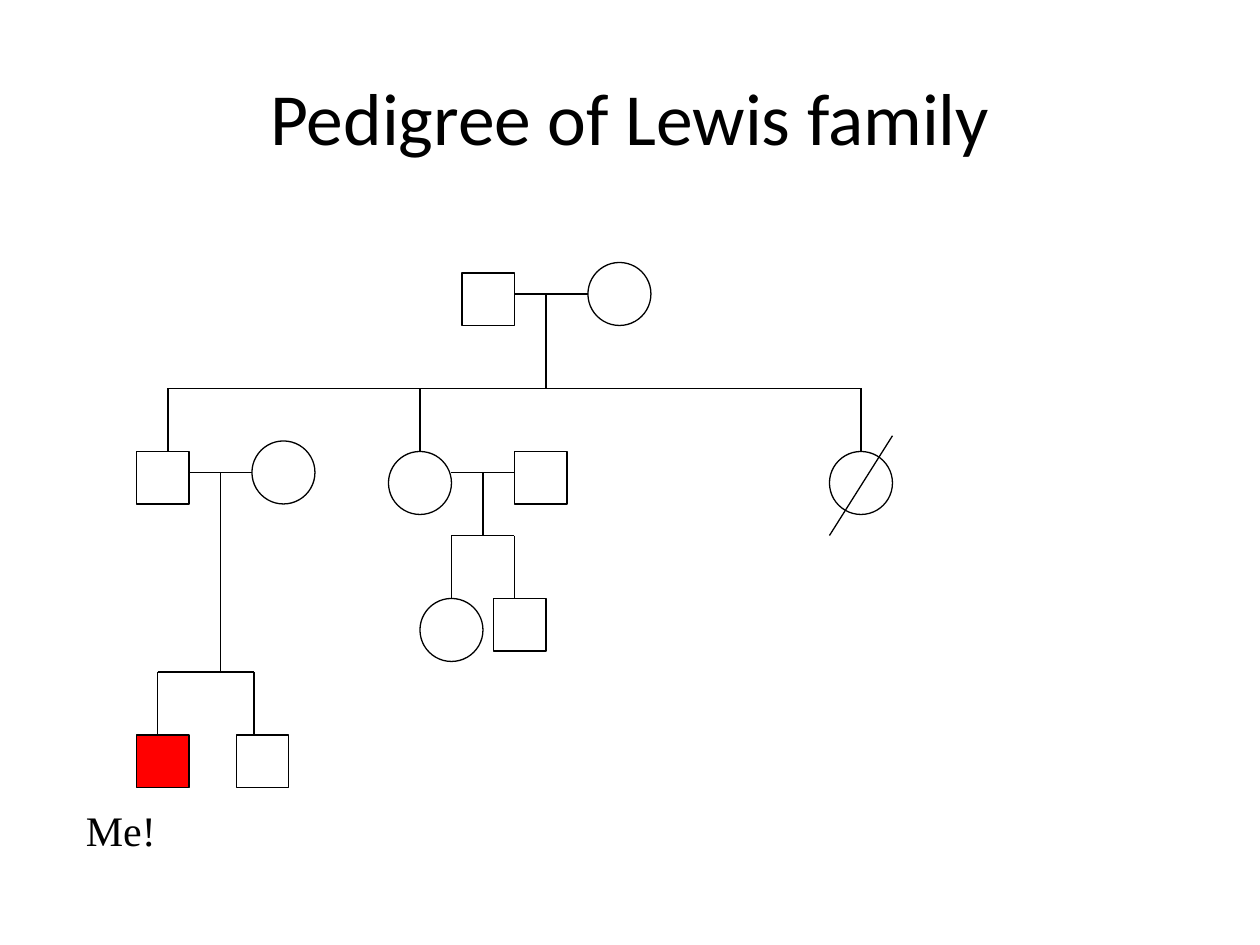
import pptx
import pptx.dml.color
import pptx.enum.shapes
import pptx.enum.text
import pptx.oxml.ns
import pptx.util
from lxml import etree

PX = 914400 // 120
SIZES = {"man": 50, "woman": 60}
DROP = 60
THEME = {
    "ink": pptx.dml.color.RGBColor(0, 0, 0),
    "red": pptx.dml.color.RGBColor(255, 0, 0),
    "white": pptx.dml.color.RGBColor(255, 255, 255),
    "line": pptx.util.Pt(0.75),
    "title": {"name": "Calibri", "size": pptx.util.Pt(42)},
    "label": {"name": "Times New Roman", "size": pptx.util.Pt(24)},
}


def px(*lengths):
    return [n * PX for n in lengths]


def set_line(line):
    line.color.rgb = THEME["ink"]
    line.width = THEME["line"]


def write(tf, text, style):
    p = tf.paragraphs[0]
    r = p.add_run()
    r.text = text
    for name, value in THEME[style].items():
        setattr(r.font, name, value)
    r.font.color.rgb = THEME["ink"]
    return p


def add_line(s, x1, y1, x2, y2):
    sp = s.shapes.add_connector(
        pptx.enum.shapes.MSO_CONNECTOR.STRAIGHT, *px(x1, y1, x2, y2))
    set_line(sp.line)
    etree.SubElement(sp._element.spPr, pptx.oxml.ns.qn("a:effectLst"))


def add_person(s, kind, x, y, fill=None):
    shape = pptx.enum.shapes.MSO_SHAPE
    preset = shape.RECTANGLE if kind == "man" else shape.OVAL
    size = SIZES[kind]
    sp = s.shapes.add_shape(preset, *px(x, y, size, size))
    sp.shadow.inherit = False
    if fill:
        sp.fill.solid()
        sp.fill.fore_color.rgb = THEME[fill]
    else:
        sp.fill.background()
    set_line(sp.line)


def add_family(s, box, couple, stem, parents, children):
    """Draw a family whose box runs from the couple's line to the children's tops.

    parents: (kind, x, y); children: (kind, line x, symbol x, fill).
    """
    x, y, w, h = box
    bar, bottom = y + h - DROP, y + h
    add_line(s, x + couple[0], y, x + couple[1], y)
    add_line(s, x + stem, y, x + stem, bar)
    add_line(s, x, bar, x + w, bar)
    for kind, dx, dy in parents:
        add_person(s, kind, x + dx, y + dy)
    for kind, line_x, symbol_x, fill in children:
        add_line(s, x + line_x, bar, x + line_x, bottom)
        add_person(s, kind, x + symbol_x, bottom, fill)


def add_title(s, box, text):
    sp = s.shapes.title
    sp.left, sp.top, sp.width, sp.height = px(*box)
    sp.text_frame.vertical_anchor = pptx.enum.text.MSO_ANCHOR.MIDDLE
    p = write(sp.text_frame, text, "title")
    p.alignment = pptx.enum.text.PP_ALIGN.CENTER


def add_label(s, box, text):
    tf = s.shapes.add_textbox(*px(*box)).text_frame
    tf.word_wrap = True
    write(tf, text, "label")


def main():
    prs = pptx.Presentation()
    prs.slide_width, prs.slide_height = px(1200, 900)
    s = prs.slides.add_slide(prs.slide_layouts[5])
    add_title(s, (60, 36, 1080, 150), "Pedigree of Lewis family")

    # Grandparents and their three children
    add_family(s, (160, 280, 660, 150), (330, 400), 360,
               [("man", 280, -20), ("woman", 400, -30)],
               [("man", 0, -30, None), ("woman", 240, 210, None),
                ("woman", 660, 630, None)])
    add_line(s, 850, 415, 790, 510)  # deceased

    # Son's family, then daughter's family
    add_family(s, (150, 450, 92, 250), (30, 90), 60,
               [("woman", 90, -30)],
               [("man", 0, -20, "red"), ("man", 92, 75, "white")])
    add_family(s, (430, 450, 60, 120), (0, 60), 30,
               [("man", 60, -20)],
               [("woman", 0, -30, None), ("man", 60, 40, None)])

    add_label(s, (70, 760, 120, 60), "Me!")
    prs.save("out.pptx")


if __name__ == "__main__":
    main()
